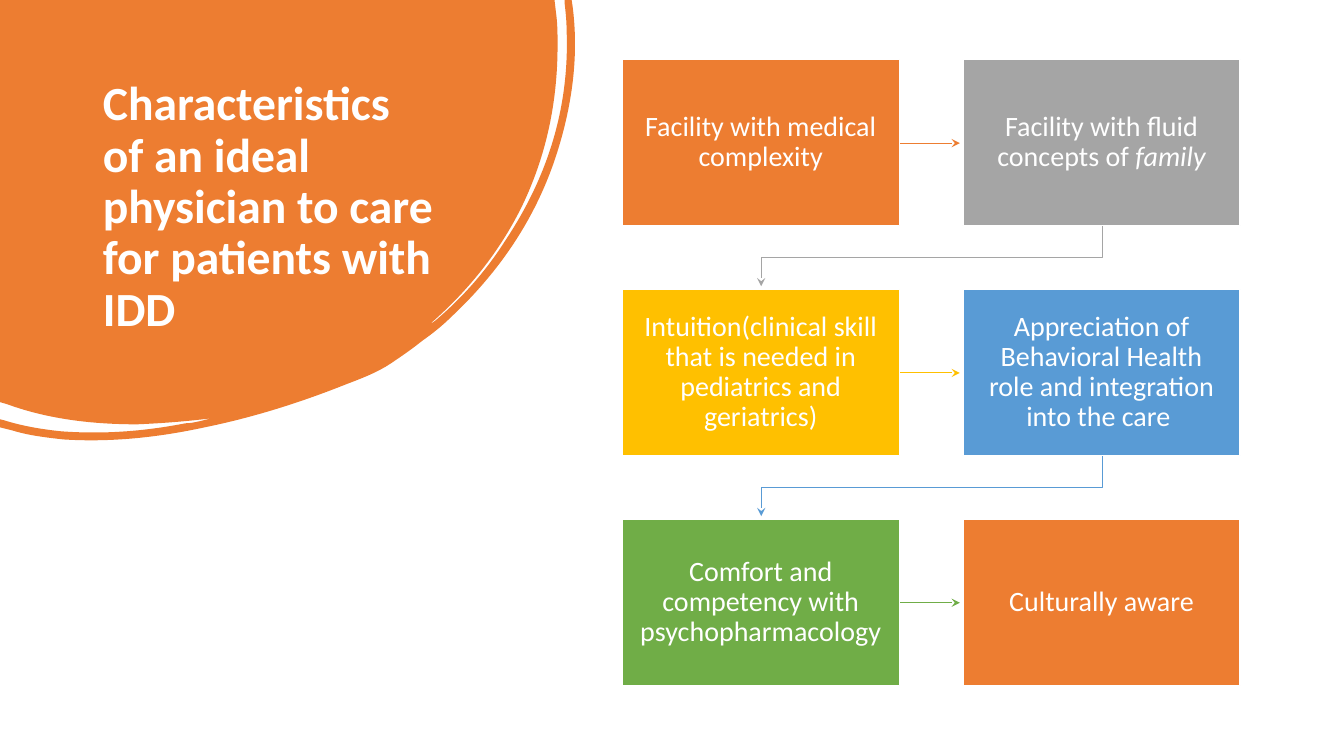
from dataclasses import dataclass

from lxml.etree import SubElement
from pptx import Presentation
from pptx.dml.color import RGBColor
from pptx.enum.shapes import MSO_CONNECTOR, MSO_SHAPE
from pptx.enum.text import MSO_ANCHOR, MSO_AUTO_SIZE, PP_ALIGN
from pptx.oxml.ns import qn
from pptx.util import Pt

PX = 9144  # EMU in one px, at 100 px to the inch


@dataclass(frozen=True)
class Theme:
    font: str = "Calibri"
    white: str = "FFFFFF"
    orange: str = "ED7D31"
    gray: str = "A5A5A5"
    gold: str = "FFC000"
    blue: str = "599BD5"
    green: str = "70AD47"
    title_size: int = 34
    card_size: int = 20
    line_spacing: float = 0.9


THEME = Theme()

TITLE = "Characteristics of an ideal physician to care for patients with IDD"
# Each card: fill colour and its runs of (text, italic)
CARDS = [
    (THEME.orange, [("Facility with medical complexity", False)]),
    (THEME.gray, [("Facility with fluid concepts of ", False), ("family", True)]),
    (THEME.gold, [("Intuition(clinical skill that is needed in pediatrics and geriatrics)", False)]),
    (THEME.blue, [("Appreciation of Behavioral Health role and integration into the care ", False)]),
    (THEME.green, [("Comfort and competency with psychopharmacology", False)]),
    (THEME.orange, [("Culturally aware", False)]),
]
# Blob outline in px from its corner: pairs are lines, sixes are Bézier curves
BLOB_SEGMENTS = [
    (550, 0), (552, 17),
    (553, 26, 553, 36, 553, 45), (553, 101, 542, 154, 518, 204),
    (496, 249, 465, 288, 427, 321), (429, 321, 430, 319, 432, 318),
    (459, 295, 482, 269, 501, 239), (543, 176, 565, 107, 562, 30),
    (562, 21, 561, 12, 560, 3), (560, 0), (567, 0), (568, 7),
    (574, 54, 568, 102, 553, 150), (533, 214, 497, 268, 448, 314),
    (439, 323, 429, 331, 419, 338), (409, 346, 399, 353, 387, 361),
    (375, 369, 360, 375, 344, 381), (299, 399, 252, 414, 203, 424),
    (157, 434, 110, 439, 63, 436), (45, 434, 28, 432, 12, 427),
    (0, 424), (0, 416), (4, 417),
    (23, 423, 42, 426, 61, 428), (103, 431, 143, 428, 184, 420),
    (189, 420, 193, 419, 198, 418), (202, 417, 206, 416, 210, 415),
    (186, 418, 161, 420, 136, 421), (92, 421, 48, 416, 7, 401), (0, 399),
]


def rgb(color):
    return RGBColor.from_string(color)


def style_text(text_frame, size, align, bold=False):
    text_frame.word_wrap = True
    for paragraph in text_frame.paragraphs:
        paragraph.alignment = align
        paragraph.line_spacing = THEME.line_spacing
        for run in paragraph.runs:
            run.font.name = THEME.font
            run.font.size = Pt(size)
            run.font.bold = bold
            run.font.color.rgb = rgb(THEME.white)


def bend_segments(shape, segments):
    """Turn the straight segments that carry control points into Bézier curves."""
    lines = list(shape._element.iter(qn("a:lnTo")))
    for line, segment in zip(lines, segments):
        if len(segment) == 6:
            curve = SubElement(line.getparent(), qn("a:cubicBezTo"))
            for x, y in zip(segment[::2], segment[1::2]):
                SubElement(curve, qn("a:pt"), x=str(x * PX), y=str(y * PX))
            line.getparent().replace(line, curve)


def add_blob(slide, left, top):
    builder = slide.shapes.build_freeform(0, 0, scale=PX)
    builder.add_line_segments([segment[-2:] for segment in BLOB_SEGMENTS], close=True)
    blob = builder.convert_to_shape(left * PX, top * PX)
    for path in blob._element.iter(qn("a:path")):
        path.set("w", str(blob.width))
        path.set("h", str(blob.height))
        for point in path.iter(qn("a:pt")):
            for axis in ("x", "y"):
                point.set(axis, str(int(point.get(axis)) * PX))
    bend_segments(blob, BLOB_SEGMENTS)
    blob.shadow.inherit = False
    blob.fill.solid()
    blob.fill.fore_color.rgb = rgb(THEME.orange)
    blob.line.fill.background()


def place_title(slide, left, top, width, height):
    title = slide.shapes.title
    title.left, title.top, title.width, title.height = (n * PX for n in (left, top, width, height))
    text_frame = title.text_frame
    text_frame.text = TITLE
    text_frame.auto_size = MSO_AUTO_SIZE.NONE
    text_frame.vertical_anchor = MSO_ANCHOR.TOP
    style_text(text_frame, THEME.title_size, PP_ALIGN.LEFT, bold=True)


def add_card(slide, left, top, width, height, color, runs):
    card = slide.shapes.add_shape(MSO_SHAPE.RECTANGLE, left * PX, top * PX, width * PX, height * PX)
    card.shadow.inherit = False
    card.fill.solid()
    card.fill.fore_color.rgb = rgb(color)
    card.line.color.rgb = rgb(THEME.white)
    card.line.width = Pt(1)
    text_frame = card.text_frame
    text_frame.margin_left = text_frame.margin_right = 13 * PX
    text_frame.margin_top = text_frame.margin_bottom = 14 * PX
    text_frame.vertical_anchor = MSO_ANCHOR.MIDDLE
    for text, italic in runs:
        run = text_frame.paragraphs[0].add_run()
        run.text = text
        run.font.italic = italic
    style_text(text_frame, THEME.card_size, PP_ALIGN.CENTER)


def add_arrow(slide, kind, start, end, color):
    connector = slide.shapes.add_connector(kind, *(n * PX for n in (*start, *end)))
    connector.line.color.rgb = rgb(color)
    connector.line.width = Pt(0.75)
    SubElement(connector.line._get_or_add_ln(), qn("a:tailEnd"), type="stealth")
    SubElement(connector._element.spPr, qn("a:effectLst"))
    return connector


def add_down_elbow(slide, start, end, color):
    """Draw down, left, down: an elbow connector turned a quarter round its centre."""
    across, down = start[0] - end[0], end[1] - start[1]
    left = (start[0] + end[0] - down) // 2
    top = (start[1] + end[1] - across) // 2
    connector = add_arrow(slide, MSO_CONNECTOR.ELBOW, (left, top), (left + down, top + across), color)
    connector._element.spPr.xfrm.set("rot", "5400000")
    for adjustments in connector._element.iter(qn("a:avLst")):
        SubElement(adjustments, qn("a:gd"), name="adj1", fmla="val 53000")


def add_card_flow(slide, left, top, width, height, columns=2, gap=63):
    rows = len(CARDS) // columns
    card_width = (width - (columns - 1) * gap) // columns
    card_height = (height - (rows - 1) * gap) // rows
    reach = gap - 3
    for index, (color, runs) in enumerate(CARDS):
        row, column = divmod(index, columns)
        x = left + column * (card_width + gap)
        y = top + row * (card_height + gap)
        if column < columns - 1:
            start = (x + card_width, y + (card_height + 1) // 2)
            add_arrow(slide, MSO_CONNECTOR.STRAIGHT, start, (start[0] + reach, start[1]), color)
        elif row < rows - 1:
            start = (x + (card_width + 1) // 2, y + card_height)
            add_down_elbow(slide, start, (left + (card_width + 1) // 2, start[1] + reach), color)
        add_card(slide, x, y, card_width, card_height, color, runs)


def build_characteristics_slide(presentation):
    slide = presentation.slides.add_slide(presentation.slide_layouts[5])
    add_blob(slide, 0, 0)
    # Bring the title in front of the blob
    slide.shapes._spTree.append(slide.shapes.title._element)
    place_title(slide, 92, 74, 352, 222)
    add_card_flow(slide, 617, 59, 613, 621)


def main():
    presentation = Presentation()
    presentation.slide_width, presentation.slide_height = 1333 * PX, 750 * PX
    build_characteristics_slide(presentation)
    presentation.save("out.pptx")


if __name__ == "__main__":
    main()
